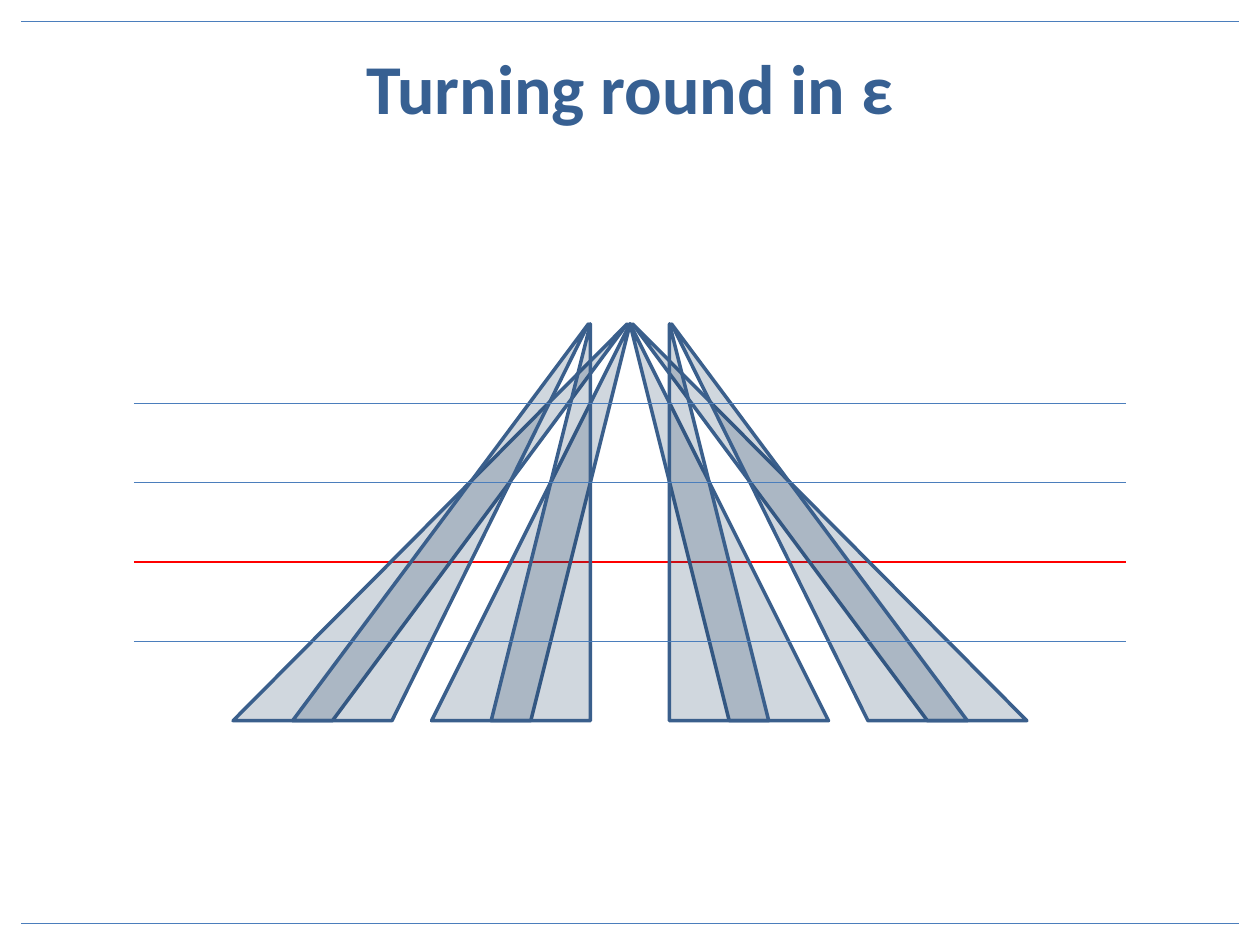
from dataclasses import dataclass

from lxml import etree
from pptx import Presentation
from pptx.dml.color import RGBColor
from pptx.enum.shapes import MSO_CONNECTOR, MSO_SHAPE
from pptx.enum.text import MSO_ANCHOR, PP_ALIGN
from pptx.oxml.ns import qn
from pptx.shapes.autoshape import Shape
from pptx.shapes.group import GroupShape
from pptx.slide import Slide
from pptx.util import Pt

STRAIGHT = MSO_CONNECTOR.STRAIGHT
TRIANGLE = MSO_SHAPE.ISOSCELES_TRIANGLE
MIDDLE = MSO_ANCHOR.MIDDLE
CENTER = PP_ALIGN.CENTER

RULE_BLUE = RGBColor(0x4B, 0x7E, 0xBC)
RED = RGBColor(0xFF, 0x00, 0x00)
TITLE_BLUE = RGBColor(0x37, 0x60, 0x92)
BEAM_FILL = RGBColor(0x17, 0x37, 0x5E)
BEAM_LINE = RGBColor(0x3A, 0x5F, 0x8C)

SLIDE_WIDTH = 720
SLIDE_HEIGHT = 540
MARGIN = 12.24
LEVEL_LEFT = 76.5
APEX_Y = 185.04
LEVEL_GAP = 45.36
BASE_Y = APEX_Y + 5 * LEVEL_GAP
BEAM_OPACITY = 20

TITLE_FORMAT = {"name": "Calibri", "size": Pt(40), "bold": True}
TITLE_FRAME_FORMAT = {"word_wrap": True, "vertical_anchor": MIDDLE}


@dataclass(frozen=True)
class Rule:
    left: float
    y: float
    color: RGBColor = RULE_BLUE


@dataclass(frozen=True)
class Beam:
    apex: float
    outer: float
    inner: float

    def mirrored(self) -> "Beam":
        return Beam(*(SLIDE_WIDTH - x for x in (self.apex, self.outer, self.inner)))


def level(number: int, color: RGBColor = RULE_BLUE) -> Rule:
    return Rule(LEVEL_LEFT, APEX_Y + number * LEVEL_GAP, color)


BACK_RULES = (
    Rule(MARGIN, MARGIN),
    Rule(MARGIN, SLIDE_HEIGHT - MARGIN),
    level(3, RED),
)
FRONT_RULES = (level(4), level(2), level(1))
LEFT_PAIRS = (
    (Beam(358.5, 133.2, 190), Beam(336.3, 167.2, 224)),
    (Beam(360, 246.6, 303.3), Beam(337.4, 280.7, 337.4)),
)


def draw_rule(slide: Slide, rule: Rule) -> None:
    connector = slide.shapes.add_connector(
        STRAIGHT, Pt(rule.left), Pt(rule.y), Pt(SLIDE_WIDTH - rule.left), Pt(rule.y)
    )
    connector.line.color.rgb = rule.color
    connector.line.width = Pt(0.75)
    etree.SubElement(connector._element.spPr, qn("a:effectLst"))


def draw_title(slide: Slide, text: str) -> None:
    title = slide.shapes.add_textbox(Pt(25.2), Pt(18), Pt(669.6), Pt(62.64))
    for name, value in TITLE_FRAME_FORMAT.items():
        setattr(title.text_frame, name, value)
    paragraph = title.text_frame.paragraphs[0]
    paragraph.alignment = CENTER
    run = paragraph.add_run()
    run.text = text
    for name, value in TITLE_FORMAT.items():
        setattr(run.font, name, value)
    run.font.color.rgb = TITLE_BLUE


def style_beam(shape: Shape) -> None:
    shape.shadow.inherit = False
    shape.fill.solid()
    shape.fill.fore_color.rgb = BEAM_FILL
    color = shape._element.spPr.find(qn("a:solidFill"))[0]
    etree.SubElement(color, qn("a:alpha"), val=str(BEAM_OPACITY * 1000))
    shape.line.color.rgb = BEAM_LINE
    shape.line.width = Pt(2)


def draw_beam(group: GroupShape, beam: Beam) -> None:
    if beam.apex == beam.inner:
        left = min(beam.outer, beam.inner)
        width = abs(beam.outer - beam.inner)
        shape = group.shapes.add_shape(
            TRIANGLE, Pt(left), Pt(APEX_Y), Pt(width), Pt(BASE_Y - APEX_Y)
        )
        shape.adjustments[0] = (beam.apex - left) / width
    else:
        builder = group.shapes.build_freeform(Pt(beam.outer), Pt(BASE_Y))
        builder.add_line_segments(
            [(Pt(beam.apex), Pt(APEX_Y)), (Pt(beam.inner), Pt(BASE_Y))], close=True
        )
        shape = builder.convert_to_shape()
    style_beam(shape)


def main() -> None:
    presentation = Presentation()
    presentation.slide_width = Pt(SLIDE_WIDTH)
    presentation.slide_height = Pt(SLIDE_HEIGHT)
    slide = presentation.slides.add_slide(presentation.slide_layouts[6])

    for rule in BACK_RULES:
        draw_rule(slide, rule)
    draw_title(slide, "Turning round in ε")
    right_pairs = tuple(
        tuple(beam.mirrored() for beam in pair) for pair in LEFT_PAIRS
    )
    for pair in LEFT_PAIRS + right_pairs:
        group = slide.shapes.add_group_shape()
        for beam in pair:
            draw_beam(group, beam)
    for rule in FRONT_RULES:
        draw_rule(slide, rule)

    presentation.save("out.pptx")


if __name__ == "__main__":
    main()
